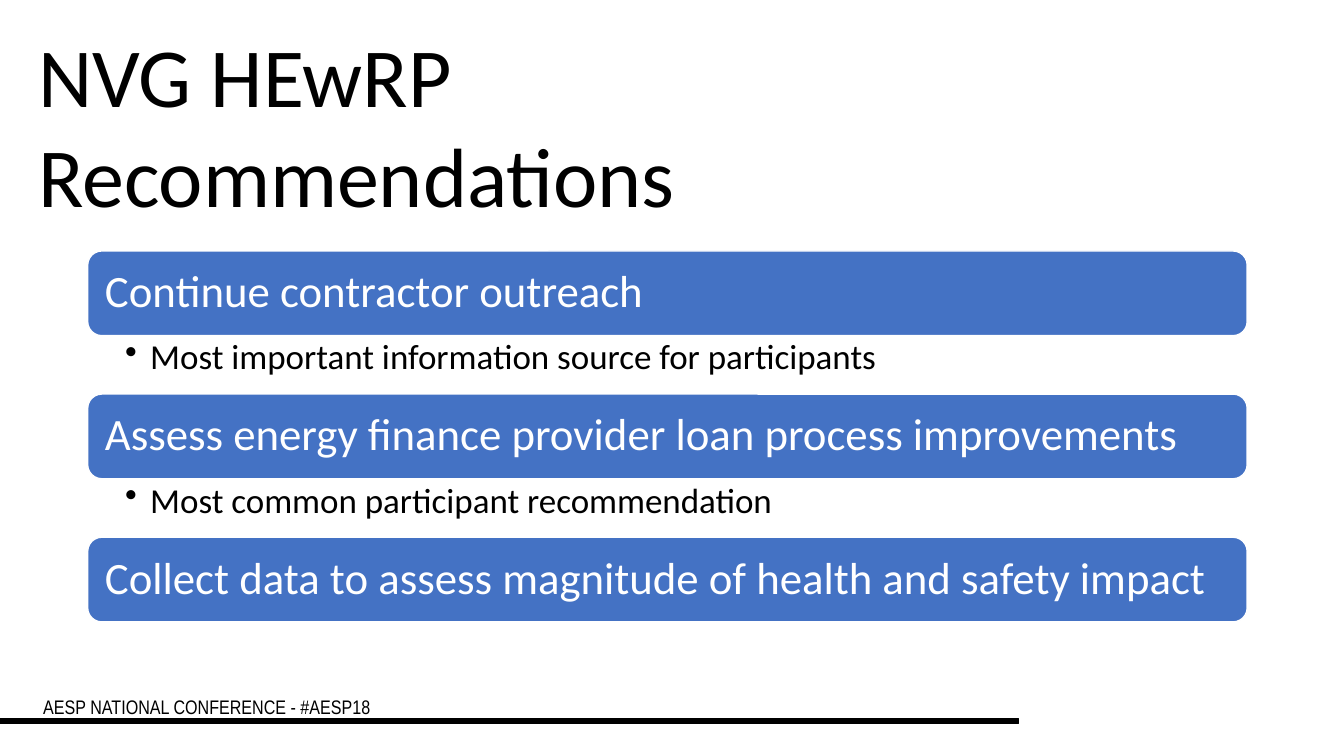
from lxml import etree
from pptx import Presentation
from pptx.dml.color import RGBColor
from pptx.enum.shapes import MSO_SHAPE
from pptx.enum.text import MSO_ANCHOR, PP_ALIGN
from pptx.oxml.ns import qn
from pptx.util import Inches, Pt

RECTANGLE = MSO_SHAPE.RECTANGLE
ROUNDED = MSO_SHAPE.ROUNDED_RECTANGLE
TOP, MIDDLE = MSO_ANCHOR.TOP, MSO_ANCHOR.MIDDLE
LEFT = PP_ALIGN.LEFT

COLORS = {"black": "000000", "white": "FFFFFF", "blue": "4472C4"}
LIST_LEFT, LIST_TOP, LIST_WIDTH = 0.87, 2.49, 11.5
HEADING_HEIGHT, DETAIL_HEIGHT = 0.84, 0.58
RECOMMENDATIONS = [
    ("Continue contractor outreach",
     "Most important information source for participants"),
    ("Assess energy finance provider loan process improvements",
     "Most common participant recommendation"),
    ("Collect data to assess magnitude of health and safety impact", None),
]


def color(name):
    """Return the named colour."""
    return RGBColor.from_string(COLORS[name])


def add_bullet(paragraph, indent):
    """Give a paragraph a hanging bullet."""
    properties = paragraph._p.get_or_add_pPr()
    properties.set("marL", str(Inches(indent)))
    properties.set("indent", str(-Inches(indent)))
    etree.SubElement(properties, qn("a:buChar")).set("char", "•")


def write_text(shape, text, size, color_name, font="Calibri", insets=(0.1, 0.05, 0.1, 0.05),
               anchor=TOP, spacing=None, bullet_indent=None):
    """Write one left-aligned paragraph into a shape."""
    frame = shape.text_frame
    frame.word_wrap = True
    frame.vertical_anchor = anchor
    (frame.margin_left, frame.margin_top,
     frame.margin_right, frame.margin_bottom) = map(Inches, insets)
    paragraph = frame.paragraphs[0]
    paragraph.alignment = LEFT
    if spacing:
        paragraph.line_spacing = spacing
    if bullet_indent:
        add_bullet(paragraph, bullet_indent)
    run = paragraph.add_run()
    run.text = text
    run.font.name = font
    run.font.size = Pt(size)
    run.font.color.rgb = color(color_name)


def add_text(slide, box, text, size, **style):
    """Add a black text box."""
    shape = slide.shapes.add_textbox(*map(Inches, box))
    write_text(shape, text, size, "black", **style)


def add_block(slide, kind, box, fill, line):
    """Add a filled and outlined shape."""
    shape = slide.shapes.add_shape(kind, *map(Inches, box))
    shape.shadow.inherit = False
    shape.fill.solid()
    shape.fill.fore_color.rgb = color(fill)
    shape.line.color.rgb = color(line)
    shape.line.width = Pt(1)
    return shape


def add_recommendations(slide):
    """Stack the heading bars with their bulleted details."""
    for index, (heading, detail) in enumerate(RECOMMENDATIONS):
        top = LIST_TOP + index * (HEADING_HEIGHT + DETAIL_HEIGHT)
        bar = add_block(slide, ROUNDED, (LIST_LEFT, top, LIST_WIDTH, HEADING_HEIGHT),
                        "blue", "white")
        write_text(bar, heading, 32, "white", insets=(0.13, 0.13, 0.13, 0.13),
                   anchor=MIDDLE, spacing=0.9)
        if detail:
            add_text(slide, (LIST_LEFT, top + HEADING_HEIGHT, LIST_WIDTH, DETAIL_HEIGHT),
                     detail, 25, insets=(0.37, 0.04, 0.25, 0.04), spacing=0.9,
                     bullet_indent=0.25)


def main():
    """Build the recommendations slide."""
    presentation = Presentation()
    presentation.slide_width = Inches(13.33)
    presentation.slide_height = Inches(7.5)
    slide = presentation.slides.add_slide(presentation.slide_layouts[6])
    add_block(slide, RECTANGLE, (0, 7.13, 10.1, 0.05), "black", "black")
    add_text(slide, (0.33, 6.84, 8.54, 0.34), "AESP NATIONAL CONFERENCE - #AESP18", 14,
             font="Arial Narrow")
    add_text(slide, (0.28, 0.18, 9.65, 2.12), "NVG HEwRP Recommendations", 60)
    add_recommendations(slide)
    presentation.save("out.pptx")


if __name__ == "__main__":
    main()
